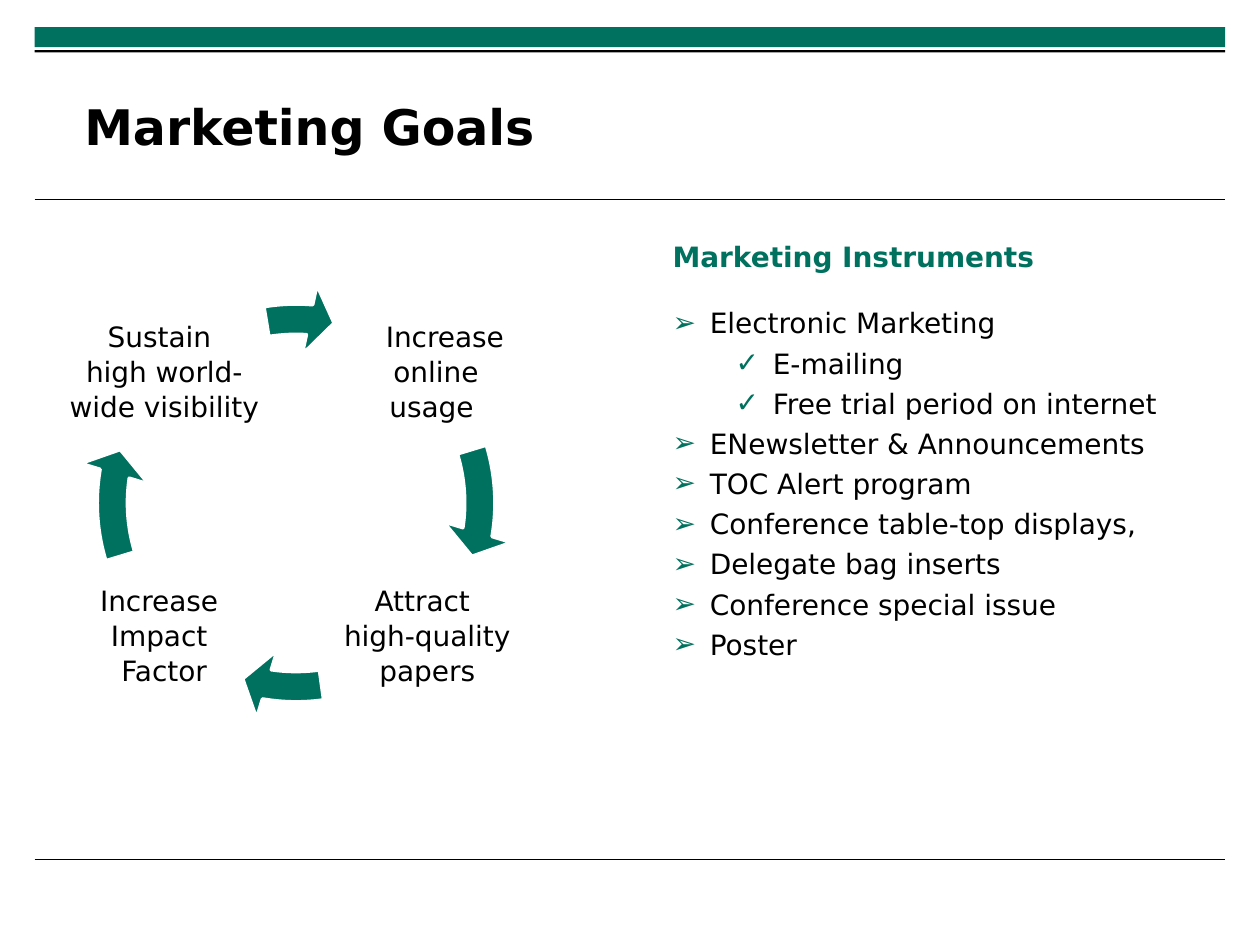
from dataclasses import dataclass

from lxml.etree import SubElement
from pptx import Presentation
from pptx.dml.color import RGBColor
from pptx.enum.shapes import MSO_CONNECTOR as Connector, MSO_SHAPE as Shape
from pptx.enum.text import MSO_ANCHOR as Anchor, MSO_AUTO_SIZE as AutoSize, PP_ALIGN as Align
from pptx.oxml.ns import qn
from pptx.util import Cm, Pt


@dataclass(frozen=True)
class Theme:
    font: str = "DejaVu Sans"
    green: RGBColor = RGBColor(0x00, 0x71, 0x5E)
    black: RGBColor = RGBColor(0, 0, 0)
    white: RGBColor = RGBColor(255, 255, 255)
    title_size: int = 28
    text_size: int = 16
    line_spacing: float = 1.04


def set_format(target, values):
    for name, value in values.items():
        setattr(target, name, value)


class SlideBuilder:
    def __init__(self, slide, theme):
        self.slide = slide
        self.shapes = slide.shapes
        self.theme = theme

    def place(self, shape, left, top, width, height):
        set_format(shape, {"left": Cm(left), "top": Cm(top),
                           "width": Cm(width), "height": Cm(height)})

    def frame(self, shape, inset_x, inset_y, anchor, wrap):
        frame = shape.text_frame
        set_format(frame, {"margin_left": Cm(inset_x), "margin_right": Cm(inset_x),
                           "margin_top": Cm(inset_y), "margin_bottom": Cm(inset_y),
                           "auto_size": AutoSize.NONE, "vertical_anchor": anchor,
                           "word_wrap": wrap})
        return frame

    def next_paragraph(self, frame, index):
        return frame.add_paragraph() if index else frame.paragraphs[0]

    def add_text(self, paragraph, text, size, color, bold=False):
        run = paragraph.add_run()
        run.text = text
        set_format(run.font, {"name": self.theme.font, "size": Pt(size), "bold": bold})
        run.font.color.rgb = color

    def bar(self, left, top, width, height, color):
        shape = self.shapes.add_shape(
            Shape.RECTANGLE, Cm(left), Cm(top), Cm(width), Cm(height))
        shape.shadow.inherit = False
        shape.fill.solid()
        shape.fill.fore_color.rgb = color
        shape.line.fill.background()

    def rule(self, left, top, width):
        line = self.shapes.add_connector(
            Connector.STRAIGHT, Cm(left), Cm(top), Cm(left + width), Cm(top))
        line.line.color.rgb = self.theme.black
        line.line.width = Pt(0.6)
        SubElement(line._element.spPr, qn("a:effectLst"))

    def title(self, text, *box):
        shape = self.shapes.title
        self.place(shape, *box)
        paragraph = self.frame(shape, 0, 0, Anchor.MIDDLE, True).paragraphs[0]
        paragraph.alignment = Align.LEFT
        self.add_text(paragraph, text, self.theme.title_size, self.theme.black, True)

    def stage(self, lines, *box):
        """Centred lines, each moved sideways by its own shift in cm."""
        shape = self.shapes.add_textbox(*map(Cm, box))
        frame = self.frame(shape, 0.05, 0.05, Anchor.MIDDLE, True)
        for index, (text, shift) in enumerate(lines):
            paragraph = self.next_paragraph(frame, index)
            side = "marL" if shift > 0 else "marR"
            paragraph._p.get_or_add_pPr().set(side, str(Cm(2 * abs(shift))))
            set_format(paragraph, {"alignment": Align.CENTER,
                                   "line_spacing": self.theme.line_spacing})
            self.add_text(paragraph, text, self.theme.text_size, self.theme.black)

    def cycle_arrow(self, head_angle, tail_angle, *box):
        shape = self.shapes.add_shape(Shape.CIRCULAR_ARROW, *map(Cm, box))
        for index, value in enumerate((0.069, 4.656, head_angle, tail_angle, 0.081)):
            shape.adjustments[index] = value
        shape.shadow.inherit = False
        shape.fill.solid()
        shape.fill.fore_color.rgb = self.theme.green
        shape.line.color.rgb = self.theme.white
        shape.line.width = Pt(2)

    def bullet(self, paragraph, symbol, indent):
        properties = paragraph._p.get_or_add_pPr()
        properties.set("marL", str(Cm(indent)))
        properties.set("indent", str(Cm(-0.75) if symbol else 0))
        if not symbol:
            SubElement(properties, qn("a:buNone"))
            return
        color = SubElement(properties, qn("a:buClr"))
        SubElement(color, qn("a:srgbClr"), val=str(self.theme.green))
        SubElement(properties, qn("a:buFont"), typeface=self.theme.font)
        SubElement(properties, qn("a:buChar"), char=symbol)

    def bullet_list(self, heading, items, *box):
        theme = self.theme
        shape = self.slide.placeholders[1]
        self.place(shape, *box)
        frame = self.frame(shape, 0.25, 0.13, Anchor.TOP, False)
        for index, (level, text) in enumerate([(None, heading), *items]):
            paragraph = self.next_paragraph(frame, index)
            is_heading = level is None
            symbol, indent = {None: ("", 0), 0: ("➢", 0.75), 1: ("✓", 2.02)}[level]
            self.bullet(paragraph, symbol, indent)
            set_format(paragraph, {"level": level or 0, "alignment": Align.LEFT,
                                   "line_spacing": theme.line_spacing,
                                   "space_before": Pt(18 if index == 1 else 0),
                                   "space_after": Pt(0 if is_heading else 3)})
            self.add_text(paragraph, text, theme.text_size,
                          theme.green if is_heading else theme.black, is_heading)


# Stages: lines with sideways shift, then left and width of the box
UPPER_STAGES = [
    ([("Increase", 0.36), ("online", 0.18), ("usage", 0.09)], 6.73, 3.76),
    ([("Sustain", -0.1), ("high world-", 0), ("wide visibility", 0)], 1.27, 4.09),
]
LOWER_STAGES = [
    ([("Attract", -0.1), ("high-quality", 0), ("papers", 0)], 6.48, 4.27),
    ([("Increase", -0.1), ("Impact", -0.1), ("Factor", 0)], 1.75, 3.12),
]
ARROW_ANGLES = [(5.485, 205.859), (59.485, 49.231),
                (113.485, 97.859), (164.516, 156.423)]
INSTRUMENTS = [
    (0, "Electronic Marketing"),
    (1, "E-mailing"),
    (1, "Free trial period on internet"),
    (0, "ENewsletter & Announcements"),
    (0, "TOC Alert program"),
    (0, "Conference table-top displays,"),
    (0, "Delegate bag inserts"),
    (0, "Conference special issue"),
    (0, "Poster"),
]


def main():
    presentation = Presentation()
    presentation.slide_width, presentation.slide_height = Cm(25.4), Cm(19.05)
    theme = Theme()
    slide = presentation.slides.add_slide(presentation.slide_layouts[1])
    builder = SlideBuilder(slide, theme)

    # Page frame
    left, width = 0.7, 24
    builder.bar(left, 0.55, width, 0.4, theme.green)
    builder.bar(left, 1.01, width, 0.05, theme.black)
    for top in (4.03, 17.32):
        builder.rule(left, top, width)

    # Title
    builder.title("Marketing Goals", 1.7, 2.13, 11.3, 0.82)

    # Cycle of goals
    for top, stages in ((5.92, UPPER_STAGES), (11.23, LOWER_STAGES)):
        for lines, stage_left, stage_width in stages:
            builder.stage(lines, stage_left, top, stage_width, 3.12)
    for head_angle, tail_angle in ARROW_ANGLES:
        builder.cycle_arrow(head_angle, tail_angle, 1.55, 5.72, 8.84, 8.84)

    # Instruments
    builder.bullet_list("Marketing Instruments", INSTRUMENTS, 13.31, 4.67, 10.49, 8.64)

    presentation.save("out.pptx")


if __name__ == "__main__":
    main()
